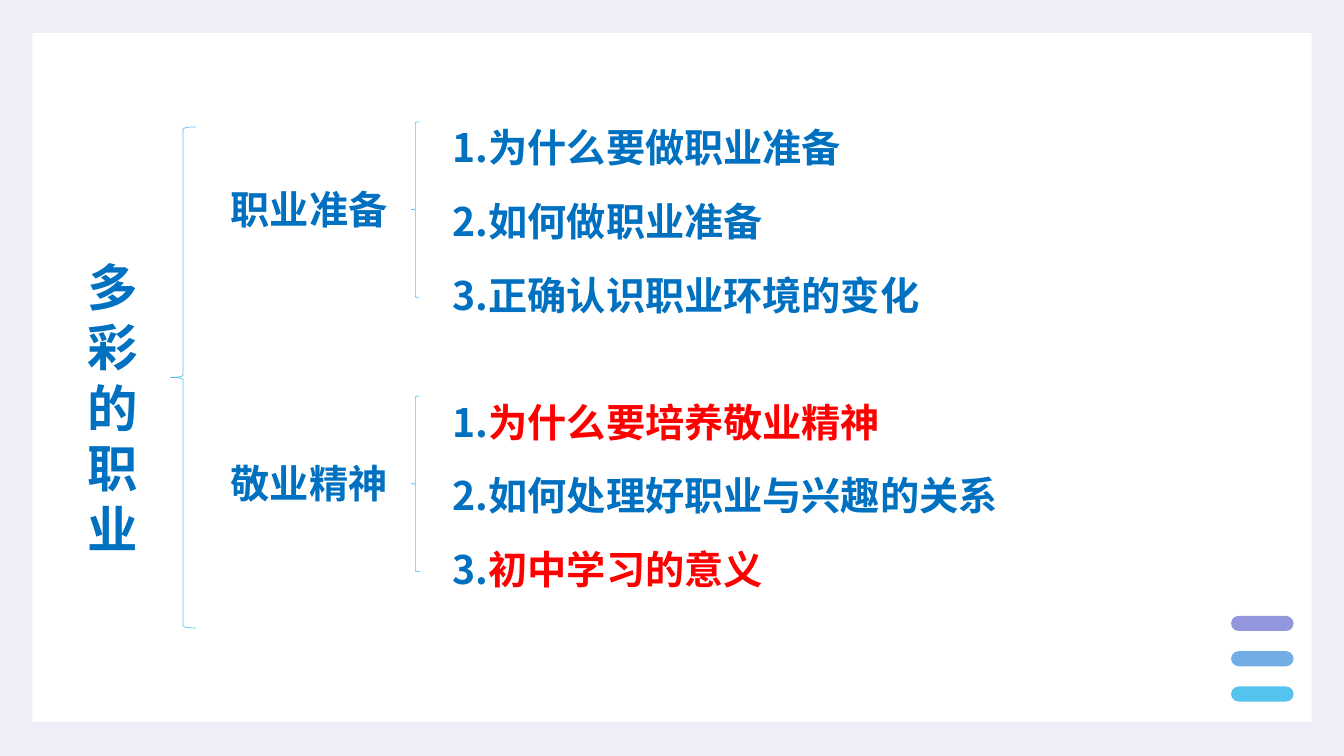
import lxml.etree
import pptx
import pptx.dml.color
import pptx.enum.shapes
import pptx.enum.text
import pptx.oxml.ns
import pptx.util

Inches, Pt = pptx.util.Inches, pptx.util.Pt
RGB = pptx.dml.color.RGBColor
SHAPE = pptx.enum.shapes.MSO_SHAPE
ALIGN = pptx.enum.text.PP_ALIGN
ANCHOR = pptx.enum.text.MSO_ANCHOR
FIT = pptx.enum.text.MSO_AUTO_SIZE
qn = pptx.oxml.ns.qn

LAVENDER = RGB(0xEE, 0xEE, 0xF8)
WHITE = RGB(0xFF, 0xFF, 0xFF)
BLUE = RGB(0x00, 0x70, 0xC0)
RED = RGB(0xFF, 0x00, 0x00)
CYAN = RGB(0x54, 0xC3, 0xEE)
SKY = RGB(0x73, 0xAD, 0xE5)
VIOLET = RGB(0x92, 0x97, 0xDD)
FONT = "Noto Sans CJK SC"

TITLE = "多彩的职业"
# Each branch: label, list width, items; each item is a list of (text, colour) runs
BRANCHES = [
    ("职业准备", 5.43, [
        [("1.为什么要做职业准备", BLUE)],
        [("2.如何做职业准备", BLUE)],
        [("3.正确认识职业环境的变化", BLUE)],
    ]),
    ("敬业精神", 6.06, [
        [("1.", BLUE), ("为什么要培养敬业精神", RED)],
        [("2.如何处理好职业与兴趣的关系", BLUE)],
        [("3.", BLUE), ("初中学习的意义", RED)],
    ]),
]
PILLS = [VIOLET, SKY, CYAN]
PILL_TOP, PILL_STEP = 6.11, 0.35
BRANCH_TOP, BRANCH_STEP = 0.91, 2.72
LABEL_DY, BRACE_DY = 0.88, 0.3


def place(sp, left, top, width, height):
    box = dict(left=left, top=top, width=width, height=height)
    for name, value in box.items():
        setattr(sp, name, Inches(value))


def write(sp, paragraphs, size, spacing, align=ALIGN.LEFT):
    """Fill a text frame with paragraphs given as lists of (text, colour) runs."""
    tf = sp.text_frame
    frame = dict(word_wrap=True, auto_size=FIT.NONE, vertical_anchor=ANCHOR.TOP)
    for name, value in frame.items():
        setattr(tf, name, value)
    for i, runs in enumerate(paragraphs):
        p = tf.add_paragraph() if i else tf.paragraphs[0]
        para = dict(alignment=align, line_spacing=Pt(spacing),
                    space_before=Pt(0), space_after=Pt(0))
        for name, value in para.items():
            setattr(p, name, value)
        pPr = p._p.get_or_add_pPr()
        pPr.set("marL", "0")
        pPr.set("indent", "0")
        lxml.etree.SubElement(pPr, qn("a:buNone"))
        for text, colour in runs:
            r = p.add_run()
            r.text = text
            for name, value in dict(name=FONT, size=Pt(size), bold=True).items():
                setattr(r.font, name, value)
            r.font.color.rgb = colour
            ea = lxml.etree.Element(qn("a:ea"), typeface=FONT)
            r._r.find(qn("a:rPr")).find(qn("a:latin")).addnext(ea)


def add_block(kind, box, colour):
    sp = s.shapes.add_shape(kind, *map(Inches, box))
    sp.shadow.inherit = False
    sp.fill.solid()
    sp.fill.fore_color.rgb = colour
    sp.line.fill.background()
    return sp


def add_brace(*box):
    sp = s.shapes.add_shape(SHAPE.LEFT_BRACE, *map(Inches, box))
    sp.shadow.inherit = False
    sp.fill.background()
    sp.line.color.rgb = CYAN
    sp.line.width = Pt(0.5)


prs = pptx.Presentation()
prs.slide_width, prs.slide_height = Inches(13.33), Inches(7.5)
s = prs.slides.add_slide(prs.slide_layouts[3])
s.background.fill.solid()
s.background.fill.fore_color.rgb = LAVENDER
title, *lists = s.placeholders

panel = add_block(SHAPE.RECTANGLE, (0.32, 0.33, 12.69, 6.83), WHITE)
s.shapes._spTree.insert(2, panel._element)  # behind the placeholders
for i, colour in enumerate(PILLS):
    box = (12.21, PILL_TOP + i * PILL_STEP, 0.62, 0.15)
    add_block(SHAPE.ROUNDED_RECTANGLE, box, colour).adjustments[0] = 0.5

place(title, 0.6, 2.49, 1.03, 3.13)
write(title, [[(TITLE, BLUE)]], 36, 43.2, ALIGN.CENTER)
add_brace(1.69, 1.26, 0.25, 4.97)

for i, (body, (label, width, items)) in enumerate(zip(lists, BRANCHES)):
    top = BRANCH_TOP + i * BRANCH_STEP
    sp = s.shapes.add_textbox(Inches(2.19), Inches(top + LABEL_DY), Inches(1.85), Inches(0.57))
    write(sp, [[(label, BLUE)]], 28, 33.6)
    add_brace(4.08, top + BRACE_DY, 0.08, 1.74)
    place(body, 4.39, top, width, 2.32)
    write(body, items, 28, 52.8)

prs.save("out.pptx")
